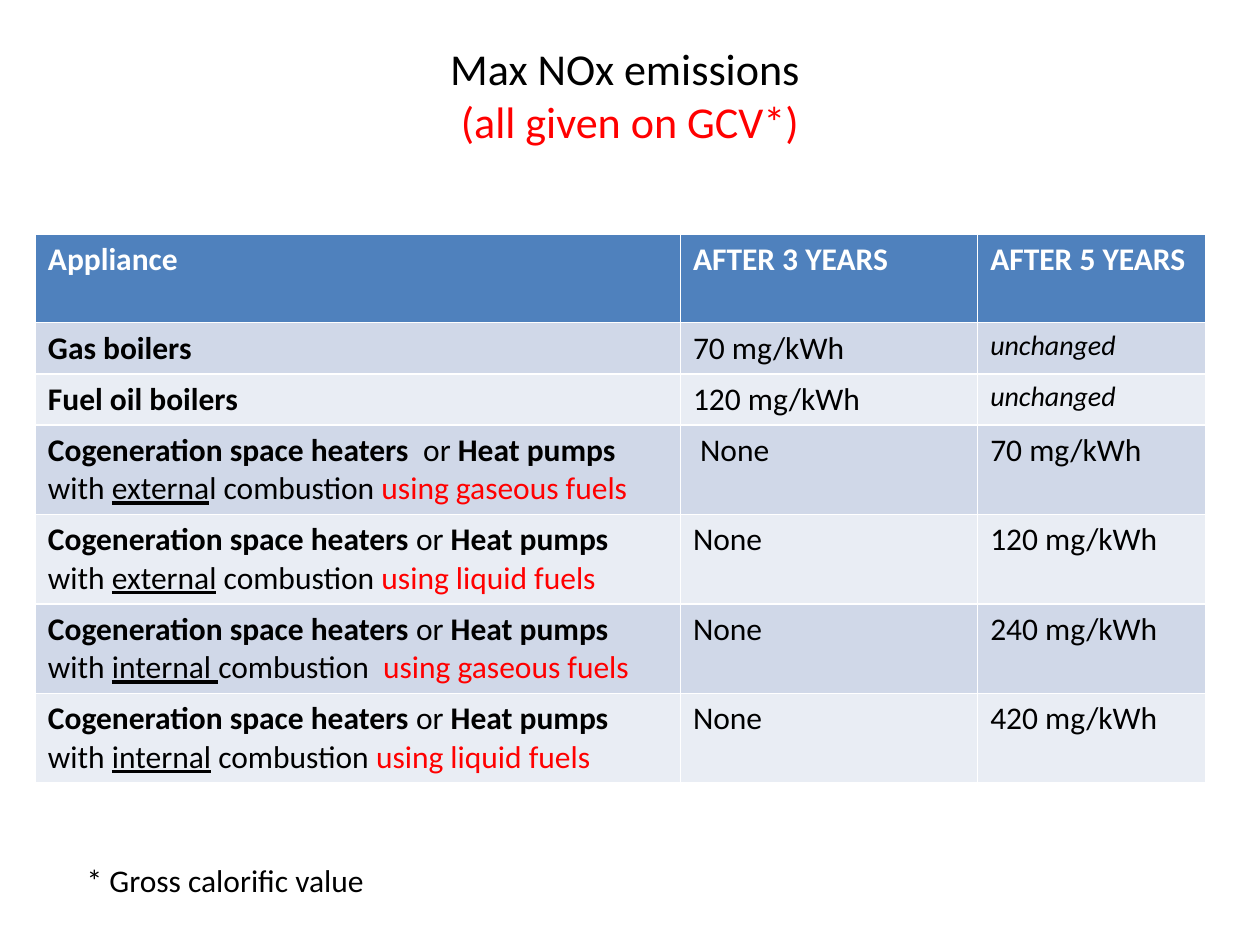
from dataclasses import dataclass

from pptx import Presentation
from pptx.dml.color import RGBColor
from pptx.enum.text import MSO_ANCHOR, MSO_AUTO_SIZE, PP_ALIGN
from pptx.util import Pt


@dataclass(frozen=True)
class Theme:
    font: str = "Calibri"
    title_size: float = 25.2
    body_size: float = 18
    remark_size: float = 16
    text: str = "000000"
    accent: str = "FF0000"
    header_text: str = "FFFFFF"
    header_fill: str = "4F81BD"
    band_fills: tuple = ("D0D8E8", "E9EDF4")


THEME = Theme()
COLUMN_WIDTHS = (368.6, 169.9, 130.3)
HEADER_HEIGHT, SHORT_HEIGHT, TALL_HEIGHT = 50.4, 29.2, 51.1
HEADERS = ("Appliance", "AFTER 3 YEARS", "AFTER 5 YEARS")
BOILERS = (("Gas boilers", "70 mg/kWh"), ("Fuel oil boilers", "120 mg/kWh"))
HEATERS = (
    ("  ", "externa", "l combustion ", "gaseous", " None", "70 mg/kWh"),
    (" ", "external", " combustion ", "liquid", "None", "120 mg/kWh"),
    (" ", "internal ", "combustion  ", "gaseous", "None", "240 mg/kWh"),
    (" ", "internal", " combustion ", "liquid", "None", "420 mg/kWh"),
)


def add_text(paragraph, text, size=THEME.body_size, color=THEME.text,
             bold=False, italic=False, underline=False):
    run = paragraph.add_run()
    run.text = text
    font = run.font
    font.name, font.size = THEME.font, Pt(size)
    font.bold, font.italic, font.underline = bold, italic, underline
    font.color.rgb = RGBColor.from_string(color)


def place(shape, left, top, width, height):
    shape.left, shape.top = Pt(left), Pt(top)
    shape.width, shape.height = Pt(width), Pt(height)


def build_title(slide, left, top, width, height):
    title = slide.shapes.title
    place(title, left, top, width, height)
    frame = title.text_frame
    frame.auto_size = MSO_AUTO_SIZE.NONE
    frame.vertical_anchor = MSO_ANCHOR.MIDDLE
    frame.margin_bottom = Pt(28.7)
    paragraph = frame.paragraphs[0]
    paragraph.alignment = PP_ALIGN.CENTER
    add_text(paragraph, "Max NOx emissions ", size=THEME.title_size)
    paragraph.add_line_break()
    add_text(paragraph, "(all given on GCV*)", size=THEME.title_size, color=THEME.accent)


def heater_runs(gap, combustion, rest, fuel):
    return [
        ("Cogeneration space heaters" + gap, {"bold": True}),
        ("or", {}),
        (" Heat pumps ", {"bold": True}),
        ("with ", {}),
        (combustion, {"underline": True}),
        (rest, {}),
        (f"using {fuel} fuels", {"color": THEME.accent}),
    ]


def table_rows():
    header_format = {"bold": True, "color": THEME.header_text}
    yield HEADER_HEIGHT, [[(header, header_format)] for header in HEADERS]
    remark = ("unchanged", {"size": THEME.remark_size, "italic": True})
    for name, limit in BOILERS:
        yield SHORT_HEIGHT, [[(name, {"bold": True})], [(limit, {})], [remark]]
    for *description, early, late in HEATERS:
        yield TALL_HEIGHT, [heater_runs(*description), [(early, {})], [(late, {})]]


def build_emissions_table(slide, left, top):
    rows = list(table_rows())
    table = slide.shapes.add_table(
        len(rows), len(COLUMN_WIDTHS), Pt(left), Pt(top),
        Pt(sum(COLUMN_WIDTHS)), Pt(sum(height for height, _ in rows)),
    ).table
    for column, width in zip(table.columns, COLUMN_WIDTHS):
        column.width = Pt(width)
    for index, (height, contents) in enumerate(rows):
        table.rows[index].height = Pt(height)
        fill = THEME.band_fills[(index - 1) % 2] if index else THEME.header_fill
        for cell, runs in zip(table.rows[index].cells, contents):
            cell.fill.solid()
            cell.fill.fore_color.rgb = RGBColor.from_string(fill)
            for text, text_format in runs:
                add_text(cell.text_frame.paragraphs[0], text, **text_format)


def build_footnote(slide, left, top, width, height):
    footnote = slide.shapes.add_textbox(Pt(left), Pt(top), Pt(width), Pt(height))
    footnote.text_frame.word_wrap = False
    footnote.text_frame.auto_size = MSO_AUTO_SIZE.SHAPE_TO_FIT_TEXT
    add_text(footnote.text_frame.paragraphs[0], "* Gross calorific value")


def main():
    presentation = Presentation()
    presentation.slide_width, presentation.slide_height = Pt(720), Pt(540)
    slide = presentation.slides.add_slide(presentation.slide_layouts[5])
    build_title(slide, 36, 21.6, 648, 90)
    build_emissions_table(slide, 20.2, 134)
    build_footnote(slide, 42.5, 488.2, 175, 29)
    presentation.save("out.pptx")


if __name__ == "__main__":
    main()
